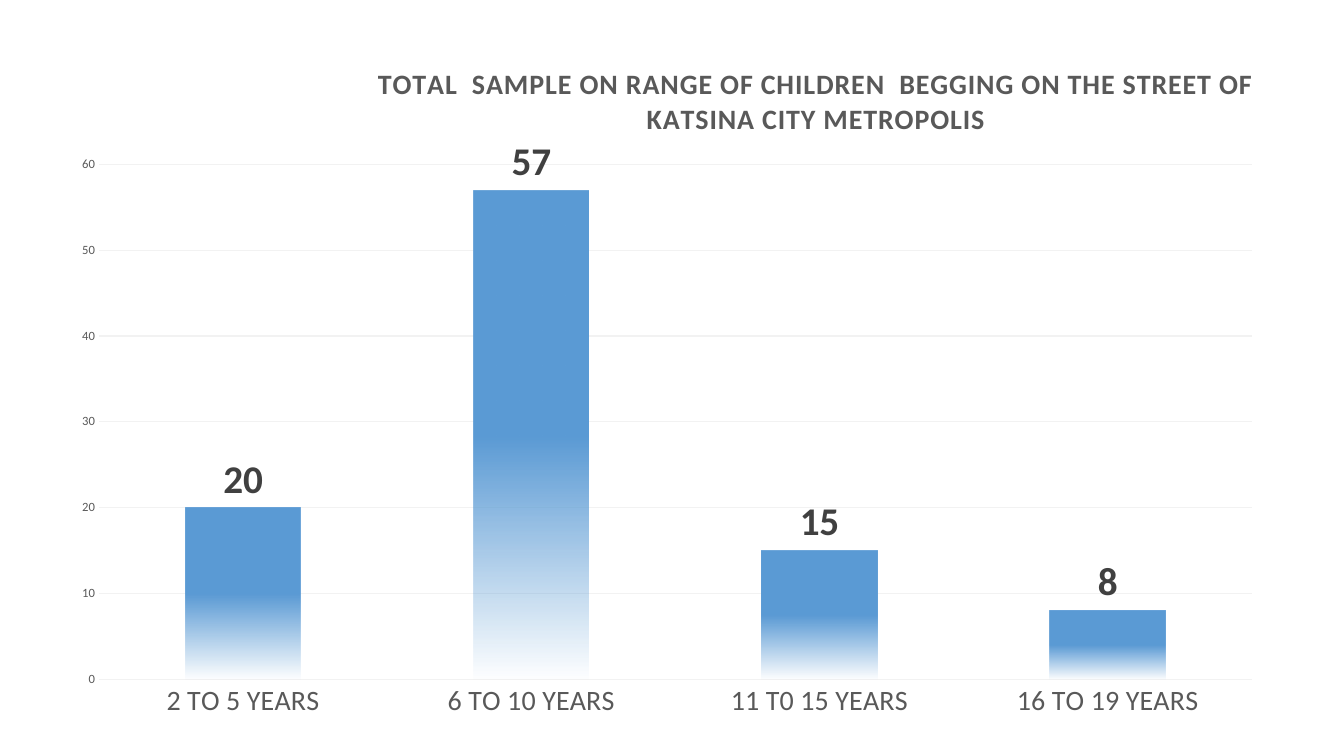
from lxml import etree
from pptx import Presentation
from pptx import util as u
from pptx.chart.data import CategoryChartData
from pptx.dml.color import RGBColor
from pptx.enum import chart as ch
from pptx.oxml import parse_xml
from pptx.oxml.ns import nsdecls, qn


def color(value):
    return RGBColor.from_string(value)


def style(font, size, value, bold=False):
    font.name, font.size, font.bold = "Calibri", u.Pt(size), bold
    font.color.rgb = color(value)


prs = Presentation()
prs.slide_width, prs.slide_height = u.Cm(33.87), u.Cm(19.05)
s = prs.slides.add_slide(prs.slide_layouts[6])

# Column chart
data = CategoryChartData()
data.categories = ["2 TO 5 YEARS", "6 TO 10 YEARS", "11 T0 15 YEARS", "16 TO 19 YEARS"]
data.add_series("Series 1", [20, 57, 15, 8])
chart = s.shapes.add_chart(ch.XL_CHART_TYPE.COLUMN_CLUSTERED, u.Cm(1.42), u.Cm(1.14),
                           u.Cm(30.68), u.Cm(17.27), data).chart
style(chart.font, 10, "000000")
chart.has_legend = False

# Chart title
chart.has_title = True
p = chart.chart_title.text_frame.paragraphs[0]
r = p.add_run()
r.text = "TOTAL  SAMPLE ON RANGE OF CHILDREN  BEGGING ON THE STREET OF KATSINA CITY METROPOLIS"
style(r.font, 20, "595959", True)
r.font._element.set("spc", "50")
chart.chart_title.include_in_layout = False

# Axes
cat, val = chart.category_axis, chart.value_axis
for axis, size in ((cat, 20), (val, 9)):
    style(axis.tick_labels.font, size, "595959")
    axis.major_tick_mark = axis.minor_tick_mark = ch.XL_TICK_MARK.NONE
    axis.format.line.fill.background()
val.minimum_scale, val.maximum_scale, val.major_unit = 0, 60, 10
grid = val.major_gridlines.format.line
grid.width = u.Pt(0.75)
grid.color.rgb = color("F2F2F2")

# Columns fading out towards the base
plot = chart.plots[0]
plot.gap_width = 150
plot.vary_by_categories = False
fill = plot.series[0].format.fill
fill.gradient()
fill.gradient_angle = 270
for stop, position in zip(fill.gradient_stops, (0.5, 1)):
    stop.position = position
    stop.color.rgb = color("5B9BD5")
last_color = fill._fill._gradFill.findall(".//" + qn("a:srgbClr"))[-1]
etree.SubElement(last_color, qn("a:alpha")).set("val", "0")

# Value labels
labels = plot.series[0].data_labels
labels.show_value = True
labels.position = ch.XL_LABEL_POSITION.OUTSIDE_END
style(labels.font, 28, "404040", True)

# Fixed places of the title and the plot area, as fractions of the chart
TITLE = {"xMode": "edge", "yMode": "edge", "x": 0.26, "y": 0.02}
PLOT = {"layoutTarget": "inner", "xMode": "edge", "yMode": "edge",
        "x": 0.035, "y": 0.174, "w": 0.947, "h": 0.751}
title_el = chart.chart_title._element
plot_el = chart._chartSpace.chart.plotArea
for parent, places in ((title_el, TITLE), (plot_el, PLOT)):
    for old in parent.findall(qn("c:layout")):
        parent.remove(old)
    items = "".join(f'<c:{k} val="{v}"/>' for k, v in places.items())
    layout = parse_xml(f'<c:layout {nsdecls("c")}><c:manualLayout>{items}'
                       '</c:manualLayout></c:layout>')
    parent.insert(1 if parent is title_el else 0, layout)

prs.save("out.pptx")
